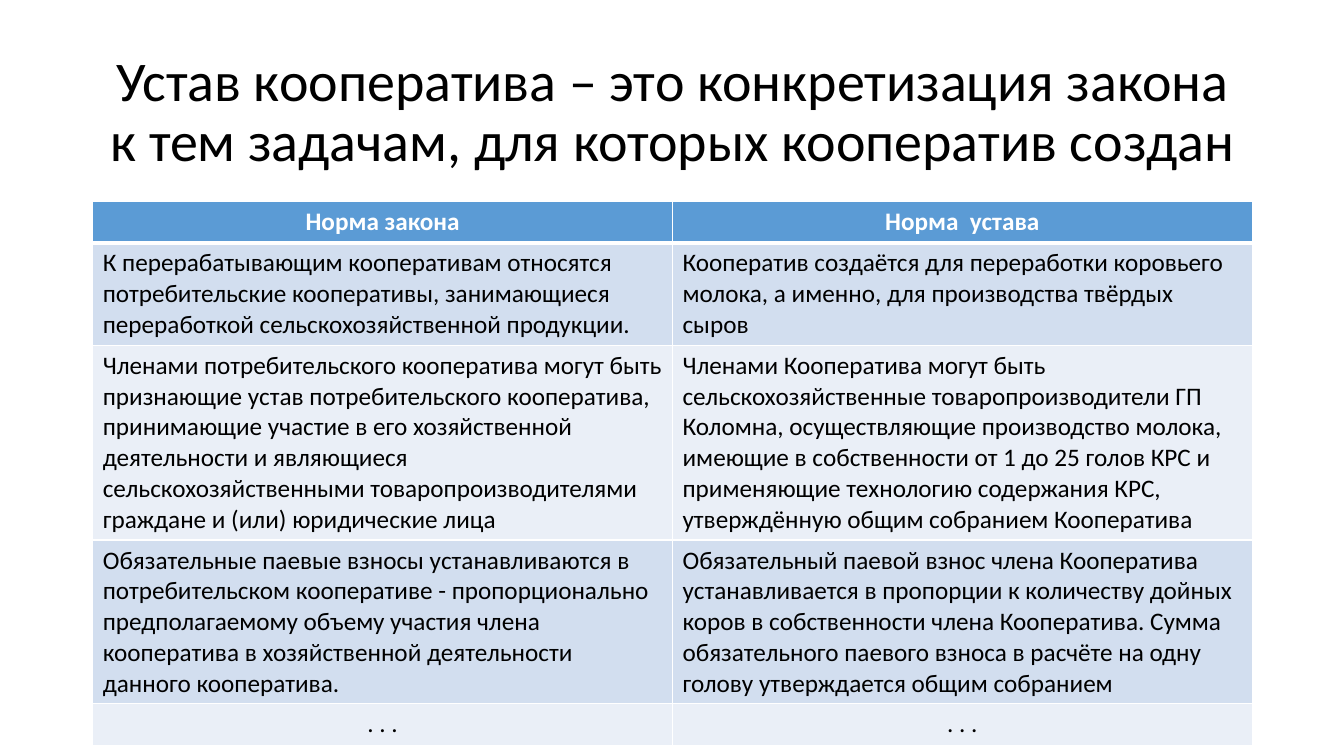
"""Builds a slide comparing norms of the law with norms of a cooperative's charter."""
from dataclasses import dataclass

from lxml.etree import SubElement
from pptx import Presentation
from pptx.dml.color import RGBColor as RGB
from pptx.enum.text import MSO_ANCHOR as ANCHOR, MSO_AUTO_SIZE as AUTO, PP_ALIGN as ALIGN
from pptx.oxml.ns import qn
from pptx.util import Inches, Pt


@dataclass(frozen=True)
class Theme:
    font: str = "Calibri"
    title_size: int = 40
    table_size: int = 18
    ink: str = "000000"
    paper: str = "FFFFFF"
    header: str = "5B9BD5"
    bands: tuple = ("D2DEEF", "EAEFF7")
    rule: int = 1
    header_rule: int = 3


class SlideBuilder:
    def __init__(self, prs, theme):
        self.theme = theme
        self.slide = prs.slides.add_slide(prs.slide_layouts[5])

    def text(self, tf, text, size, color, align, bold=False):
        p = tf.paragraphs[0]
        p.alignment = align
        r = p.add_run()
        r.text = text
        fmt = {"name": self.theme.font, "size": Pt(size), "bold": bold}
        for key, value in fmt.items():
            setattr(r.font, key, value)
        r.font.color.rgb = RGB.from_string(color)
        return p

    def title(self, text, left, top, width, height):
        sp = self.slide.shapes.title
        box = {"left": left, "top": top, "width": width, "height": height}
        for key, value in box.items():
            setattr(sp, key, Inches(value))
        tf = sp.text_frame
        fmt = {"word_wrap": True, "auto_size": AUTO.NONE, "vertical_anchor": ANCHOR.MIDDLE}
        for key, value in fmt.items():
            setattr(tf, key, value)
        p = self.text(tf, text, self.theme.title_size, self.theme.ink, ALIGN.CENTER)
        p.line_spacing = 0.9

    def border(self, cell, side, width):
        ln = SubElement(cell._tc.get_or_add_tcPr(), qn(f"a:ln{side}"), w=str(Pt(width)))
        fill = SubElement(ln, qn("a:solidFill"))
        SubElement(fill, qn("a:srgbClr"), val=self.theme.paper)

    def cell(self, cell, text, row):
        th = self.theme
        is_header = row == 0
        widths = {side: th.rule for side in "LRTB"}
        if is_header:
            widths["B"] = th.header_rule
        elif row == 1:
            widths["T"] = th.header_rule
        for side, width in widths.items():
            self.border(cell, side, width)
        cell.fill.solid()
        fill = th.header if is_header else th.bands[(row - 1) % 2]
        cell.fill.fore_color.rgb = RGB.from_string(fill)
        align = ALIGN.CENTER if is_header or text == ELLIPSIS else ALIGN.LEFT
        color = th.paper if is_header else th.ink
        self.text(cell.text_frame, text, th.table_size, color, align, is_header)

    def table(self, rows, left, top, width, row_height):
        size = (left, top, width, row_height * len(rows))
        frame = self.slide.shapes.add_table(len(rows), len(rows[0]), *map(Inches, size))
        for i, texts in enumerate(rows):
            frame.table.rows[i].height = Inches(row_height)
            for j, text in enumerate(texts):
                self.cell(frame.table.cell(i, j), text, i)


ELLIPSIS = ". . ."
TITLE = "Устав кооператива – это конкретизация закона к тем задачам, для которых кооператив создан"
NORMS = [
    ("Норма закона", "Норма  устава"),
    ("К перерабатывающим кооперативам относятся потребительские кооперативы, "
     "занимающиеся переработкой сельскохозяйственной продукции.",
     "Кооператив создаётся для переработки коровьего молока, а именно, "
     "для производства твёрдых сыров"),
    ("Членами потребительского кооператива могут быть признающие устав "
     "потребительского кооператива, принимающие участие в его хозяйственной "
     "деятельности и являющиеся сельскохозяйственными товаропроизводителями "
     "граждане и (или) юридические лица",
     "Членами Кооператива могут быть сельскохозяйственные товаропроизводители "
     "ГП Коломна, осуществляющие производство молока, имеющие в собственности "
     "от 1 до 25 голов КРС и применяющие технологию содержания КРС, "
     "утверждённую общим собранием Кооператива"),
    ("Обязательные паевые взносы устанавливаются в потребительском кооперативе - "
     "пропорционально предполагаемому объему участия члена кооператива в "
     "хозяйственной деятельности данного кооператива.",
     "Обязательный паевой взнос члена Кооператива устанавливается в пропорции "
     "к количеству дойных коров в собственности члена Кооператива. Сумма "
     "обязательного паевого взноса в расчёте на одну голову утверждается "
     "общим собранием"),
    (ELLIPSIS, ELLIPSIS),
]


def main():
    prs = Presentation()
    prs.slide_width, prs.slide_height = Inches(13.33), Inches(7.5)
    s = SlideBuilder(prs, Theme())
    s.title(TITLE, 0.92, 0.4, 11.5, 1.45)
    s.table(NORMS, 0.92, 2, 11.5, 0.41)
    prs.save("out.pptx")


if __name__ == "__main__":
    main()
